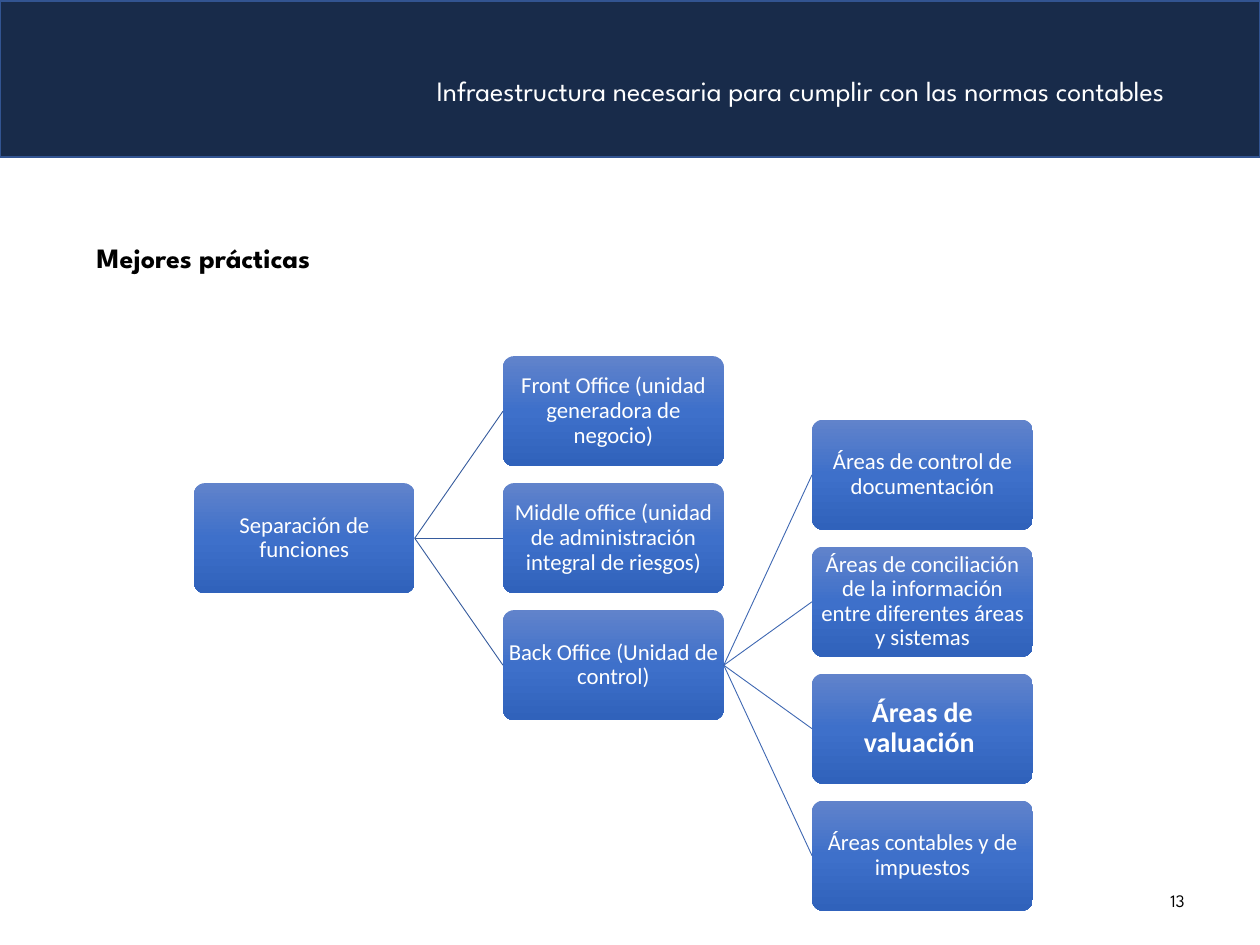
import copy
from lxml import etree
from pptx import Presentation, util as u
from pptx.dml import color
from pptx.enum import shapes, text
from pptx.oxml import ns

TITLE = "Infraestructura necesaria para cumplir con las normas contables"
HEADING = "Mejores prácticas"
PAGE_NUMBER = "13"
KEY_AREA = "Áreas de valuación "
# Each node: (label, children)
TREE = ("Separación de funciones", [
    ("Front Office (unidad generadora de negocio)", []),
    ("Middle office (unidad de administración integral de riesgos)", []),
    ("Back Office (Unidad de control)", [
        ("Áreas de control de documentación", []),
        ("Áreas de conciliación de la información entre diferentes áreas y sistemas", []),
        (KEY_AREA, []),
        ("Áreas contables y de impuestos", []),
    ]),
])

HEAD_FONT, NODE_FONT = "League Spartan", "Calibri"
NAVY, NAVY_EDGE, WHITE, BLACK = "182B4A", "325491", "FFFFFF", "000000"
NODE_STOPS = [(0, "6183CB"), (0.5, "3E70CA"), (1, "3062BB")]
BRANCH_COLORS = ["365B9D", "3E67B2"]  # by depth of the parent

NODE_W, NODE_H = 4.45, 2.22
COLUMN_STEP, ROW_STEP = 6.23, 2.56
ROOT_LEFT, ROOT_MIDDLE = 3.91, 10.85
RIGHT_SIDE, LEFT_SIDE = 3, 1


def rgb(hex_color):
    return color.RGBColor.from_string(hex_color)


def write(frame, wording, font, size, ink, align, bold=False, spacing=1.0,
          anchor=text.MSO_ANCHOR.MIDDLE):
    frame.word_wrap = True
    frame.vertical_anchor = anchor
    paragraph = frame.paragraphs[0]
    paragraph.alignment = align
    paragraph.line_spacing = spacing
    run = paragraph.add_run()
    run.text = wording
    run.font.name, run.font.size, run.font.bold = font, u.Pt(size), bold
    run.font.color.rgb = rgb(ink)


def add_label(slide, box, *args, **kwargs):
    label = slide.shapes.add_textbox(*map(u.Cm, box))
    write(label.text_frame, *args, **kwargs)


def add_band(slide):
    band = slide.shapes.add_shape(shapes.MSO_SHAPE.RECTANGLE, 0, u.Cm(0.02), u.Cm(25.4), u.Cm(3.15))
    band.shadow.inherit = False
    band.fill.solid()
    band.fill.fore_color.rgb = rgb(NAVY)
    band.line.color.rgb = rgb(NAVY_EDGE)
    band.line.width = u.Pt(1)


def fill_gradient(shape):
    """Shade the shape from top to bottom with NODE_STOPS."""
    shape.fill.gradient()
    shape.fill.gradient_angle = 270
    stop_list = shape.element.spPr.find(".//" + ns.qn("a:gsLst"))
    while len(stop_list) < len(NODE_STOPS):
        stop_list.append(copy.deepcopy(stop_list[-1]))
    for stop, (position, shade) in zip(shape.fill.gradient_stops, NODE_STOPS):
        stop.position = position
        stop.color.rgb = rgb(shade)


def add_node(slide, label, depth, middle):
    node = slide.shapes.add_shape(
        shapes.MSO_SHAPE.ROUNDED_RECTANGLE,
        u.Cm(ROOT_LEFT + depth * COLUMN_STEP), u.Cm(middle - NODE_H / 2),
        u.Cm(NODE_W), u.Cm(NODE_H))
    node.adjustments[0] = 0.1
    node.shadow.inherit = False
    node.line.fill.background()
    fill_gradient(node)
    frame = node.text_frame
    frame.margin_left = frame.margin_right = u.Cm(0.02)
    frame.margin_top = frame.margin_bottom = u.Cm(0.02)
    is_key = label == KEY_AREA
    write(frame, label, NODE_FONT, 16 if is_key else 13, WHITE,
          text.PP_ALIGN.CENTER, bold=is_key, spacing=0.9)
    return node


def add_branch(slide, parent, child, depth):
    branch = slide.shapes.add_connector(shapes.MSO_CONNECTOR.STRAIGHT, 0, 0, 0, 0)
    branch.begin_connect(parent, RIGHT_SIDE)
    branch.end_connect(child, LEFT_SIDE)
    branch.line.color.rgb = rgb(BRANCH_COLORS[depth])
    branch.line.width = u.Pt(0.5)
    etree.SubElement(branch.element.spPr, ns.qn("a:effectLst"))


def add_tree(slide, tree, depth, middle):
    """Draw a node and its children, which are centred on it."""
    label, children = tree
    node = add_node(slide, label, depth, middle)
    for row, child_tree in enumerate(children):
        offset = (row - (len(children) - 1) / 2) * ROW_STEP
        child = add_tree(slide, child_tree, depth + 1, middle + offset)
        add_branch(slide, node, child, depth)
    return node


def main():
    deck = Presentation()
    deck.slide_width, deck.slide_height = u.Cm(25.4), u.Cm(19.05)
    slide = deck.slides.add_slide(deck.slide_layouts[6])
    add_band(slide)
    add_label(slide, (1.83, 0.33, 21.9, 3.05), TITLE, HEAD_FONT, 16, WHITE,
              text.PP_ALIGN.RIGHT, spacing=0.9)
    add_label(slide, (1.7, 4.52, 22, 1.5), HEADING, HEAD_FONT, 16, BLACK,
              text.PP_ALIGN.LEFT, bold=True, spacing=1.3, anchor=text.MSO_ANCHOR.TOP)
    add_tree(slide, TREE, 0, ROOT_MIDDLE)
    add_label(slide, (18.21, 17.65, 5.92, 1.02), PAGE_NUMBER, HEAD_FONT, 10, BLACK,
              text.PP_ALIGN.RIGHT)
    deck.save("out.pptx")


if __name__ == "__main__":
    main()
